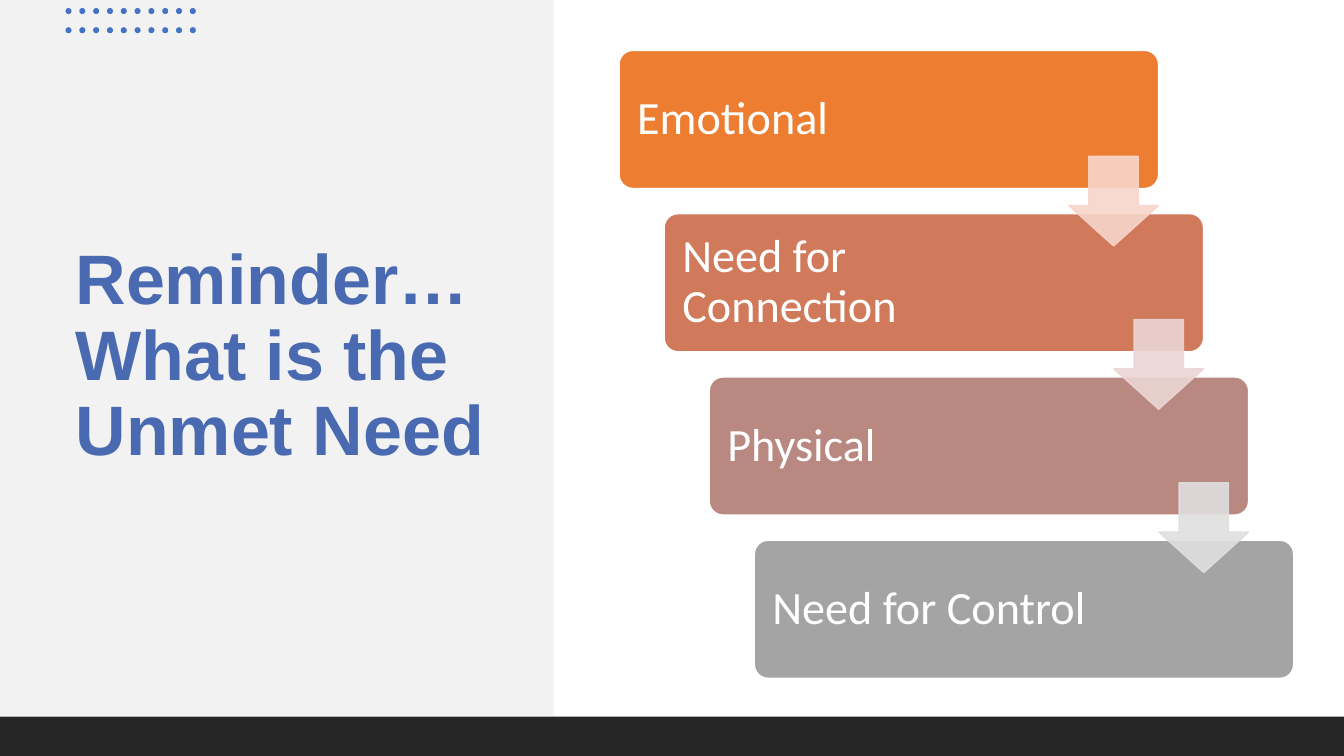
from pptx import Presentation
from pptx.util import Inches, Pt
from pptx.dml.color import RGBColor
from pptx.enum.shapes import MSO_SHAPE
from pptx.enum.text import MSO_ANCHOR
from pptx.oxml.ns import qn
from lxml import etree

RECT, OVAL = MSO_SHAPE.RECTANGLE, MSO_SHAPE.OVAL
ROUND, DOWN = MSO_SHAPE.ROUNDED_RECTANGLE, MSO_SHAPE.DOWN_ARROW
MIDDLE = MSO_ANCHOR.MIDDLE

W, H = 13.33, 7.5
PANEL_W, FOOTER_H = 5.49, 0.39

# Staircase: first step's corner, offset between steps, step size
STEP_X, STEP_Y = 6.14, 0.5
STEP_DX, STEP_DY = 0.447, 1.62
STEP_W, STEP_H = 5.35, 1.37
ARROW = 0.89
STEPS = [
    ("Emotional", "ED7D31", "F7D5CB"),
    ("Need for Connection", "D07A5B", "EBD6D4"),
    ("Physical", "B88881", "DFDFDF"),
    ("Need for Control", "A4A4A4", None),
]


def rgb(value):
    return RGBColor.from_string(value)


def set_alpha(fill, percent):
    color = fill._xPr.find(qn("a:solidFill"))[0]
    etree.SubElement(color, qn("a:alpha"), val=str(percent * 1000))


def add_block(shapes, kind, x, y, w, h, color, line=None, adjust=(), alpha=None):
    sp = shapes.add_shape(kind, Inches(x), Inches(y), Inches(w), Inches(h))
    sp.shadow.inherit = False
    sp.fill.solid()
    sp.fill.fore_color.rgb = rgb(color)
    if line:
        sp.line.color.rgb = rgb(line)
        sp.line.width = Pt(1)
    else:
        sp.line.fill.background()
    for i, value in enumerate(adjust):
        sp.adjustments[i] = value
    if alpha:
        set_alpha(sp.fill, alpha)
        set_alpha(sp.line.fill, alpha)
    return sp


def add_label(shapes, text, x, y, w, h, font, size, color, insets, bold=False):
    sp = shapes.add_textbox(Inches(x), Inches(y), Inches(w), Inches(h))
    tf = sp.text_frame
    tf.word_wrap = True
    tf.vertical_anchor = MIDDLE
    tf.margin_left = tf.margin_right = Inches(insets[0])
    tf.margin_top = tf.margin_bottom = Inches(insets[1])
    p = tf.paragraphs[0]
    p.text = text
    p.line_spacing = 0.9
    p.font.name, p.font.size, p.font.bold = font, Pt(size), bold
    p.font.color.rgb = rgb(color)


def add_dots(s, x, y, columns, rows):
    group = s.shapes.add_group_shape()
    for column in range(columns):
        for row in range(rows):
            add_block(group.shapes, OVAL, x + column * 0.137, y + row * 0.19,
                      0.06, 0.06, "4472C4")


def add_staircase(s):
    group = s.shapes.add_group_shape()
    corners = [(STEP_X + i * STEP_DX, STEP_Y + i * STEP_DY)
               for i in range(len(STEPS))]
    for (x, y), (text, color, _) in zip(corners, STEPS):
        add_block(group.shapes, ROUND, x, y, STEP_W, STEP_H, color, "FFFFFF", (0.1,))
        add_label(group.shapes, text, x + 0.04, y + 0.04, 3.93, STEP_H - 0.08,
                  "Calibri", 33, "FFFFFF", (0.14, 0.14))
    # Arrows lie above all the steps, flush with each right edge
    for (x, y), (_, _, tint) in zip(corners, STEPS):
        if tint:
            add_block(group.shapes, DOWN, x + STEP_W - ARROW, y + 1.05, ARROW, ARROW,
                      tint, tint, (0.55, 0.45), alpha=90)


def main():
    prs = Presentation()
    prs.slide_width, prs.slide_height = Inches(W), Inches(H)
    s = prs.slides.add_slide(prs.slide_layouts[6])

    # Background and title panel
    add_block(s.shapes, RECT, 0, 0, W, H, "FFFFFF")
    add_block(s.shapes, RECT, 0, 0, PANEL_W, H - 0.4, "F2F2F2")
    add_label(s.shapes, "Reminder…\vWhat is the Unmet Need", 0.65, 1.32, 4.29, 4.45,
              "Arial", 50, "496AB1", (0.1, 0.05), bold=True)
    add_dots(s, 0.65, 0.08, columns=10, rows=2)

    # Footer bar
    add_block(s.shapes, RECT, 0, H - FOOTER_H, W, FOOTER_H, "262626")

    # Needs
    add_staircase(s)
    prs.save("out.pptx")


if __name__ == "__main__":
    main()
